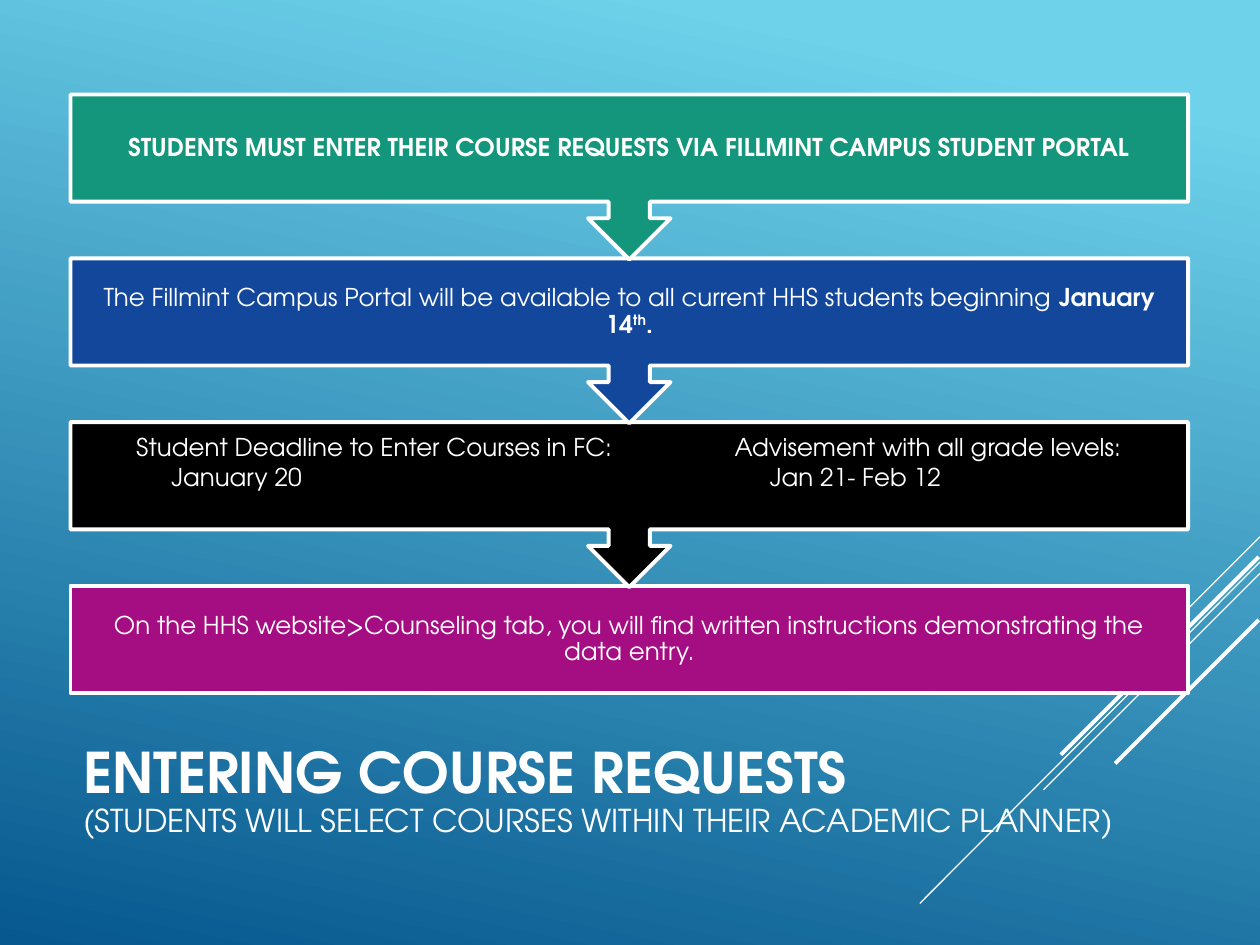
import pptx
import pptx.util
import pptx.dml.color
import pptx.enum.shapes
import pptx.enum.text
import pptx.oxml
import pptx.oxml.ns
from pptx.util import Inches

RGBColor = pptx.dml.color.RGBColor
Shape = pptx.enum.shapes.MSO_SHAPE
Align = pptx.enum.text.PP_ALIGN

WHITE = RGBColor(0xFF, 0xFF, 0xFF)
SKY = RGBColor(0x6E, 0xD2, 0xEB)
DEEP_BLUE = RGBColor(0x06, 0x58, 0x8E)
GREEN = RGBColor(0x14, 0x96, 0x7C)
BLUE = RGBColor(0x12, 0x47, 0x9B)
BLACK = RGBColor(0x00, 0x00, 0x00)
MAGENTA = RGBColor(0xA5, 0x0E, 0x82)
FONT = "TeX Gyre Adventor"


def add_span(para, text, size=14, bold=False):
    span = para.add_run()
    span.text = text
    formats = {"name": FONT, "size": pptx.util.Pt(size), "bold": bold}
    for name, value in formats.items():
        setattr(span.font, name, value)
    span.font.color.rgb = WHITE
    return span


def set_frame(frame, margin_x, margin_y):
    formats = {
        "word_wrap": True,
        "vertical_anchor": pptx.enum.text.MSO_ANCHOR.MIDDLE,
        "margin_left": Inches(margin_x),
        "margin_right": Inches(margin_x),
        "margin_top": Inches(margin_y),
        "margin_bottom": Inches(margin_y),
    }
    for name, value in formats.items():
        setattr(frame, name, value)


deck = pptx.Presentation()
deck.slide_width, deck.slide_height = Inches(10), Inches(7.5)
page = deck.slides.add_slide(deck.slide_layouts[5])

# Background
backdrop = page.background.fill
backdrop.gradient()
backdrop.gradient_angle = 258
for stop, color, position in zip(backdrop.gradient_stops, (SKY, DEEP_BLUE), (0.1, 1)):
    stop.color.rgb = color
    stop.position = position

# Diagonal lines in the corner: start x, start y, end x, end y, width
diagonals = [
    (10, 4.26, 9.17, 5.09, 0.75),
    (10, 4.46, 7.3, 7.17, 0.75),
    (10, 4.55, 8.28, 6.27, 0.75),
    (9.99, 4.42, 8.42, 5.99, 2.25),
    (9.99, 4.92, 8.85, 6.06, 2.25),
]
for *ends, width in diagonals:
    diagonal = page.shapes.add_connector(
        pptx.enum.shapes.MSO_CONNECTOR.STRAIGHT, *map(Inches, ends))
    diagonal.line.color.rgb = WHITE
    diagonal.line.width = pptx.util.Pt(width)
    diagonal._element.spPr.append(pptx.oxml.parse_xml(
        "<a:effectLst %s/>" % pptx.oxml.ns.nsdecls("a")))

# Title
title = page.shapes.title
title.left, title.top = Inches(0.56), Inches(5.5)
title.width, title.height = Inches(8.52), Inches(1.58)
set_frame(title.text_frame, 0.1, 0.05)
para = title.text_frame.paragraphs[0]
para.alignment = Align.LEFT
para.line_spacing = 0.9
add_span(para, "ENTERING COURSE REQUESTS", 32, True)
para.add_line_break()
add_span(para, "(STUDENTS WILL SELECT COURSES WITHIN THEIR ACADEMIC PLANNER)", 18)

# Steps: fill and spans of (text, bold, superscript)
steps = [
    (GREEN, [("STUDENTS MUST ENTER THEIR COURSE REQUESTS VIA FILLMINT CAMPUS "
              "STUDENT PORTAL", True, False)]),
    (BLUE, [("The Fillmint Campus Portal will be available to all current HHS "
             "students beginning ", False, False),
            ("January 14", True, False), ("th", True, True), (".", True, False)]),
    (BLACK, []),
    (MAGENTA, [("On the HHS website>Counseling tab, you will find written "
                "instructions demonstrating the data entry.", False, False)]),
]
STEP_TOP, STEP_PITCH = 0.75, 1.3
last = len(steps) - 1

# Drawn from the bottom up, so that each arrow tip covers the box below it
for index, (color, spans) in reversed(list(enumerate(steps))):
    kind, height = (Shape.RECTANGLE, 0.85) if index == last else (Shape.DOWN_ARROW_CALLOUT, 1.31)
    box = page.shapes.add_shape(
        kind, Inches(0.56), Inches(STEP_TOP + index * STEP_PITCH), Inches(8.87), Inches(height))
    box.shadow.inherit = False
    box.fill.solid()
    box.fill.fore_color.rgb = color
    box.line.color.rgb = WHITE
    box.line.width = pptx.util.Pt(2.25)
    set_frame(box.text_frame, 0.11, 0.11)
    para = box.text_frame.paragraphs[0]
    para.alignment = Align.CENTER
    para.line_spacing = 0.9
    for text, bold, superscript in spans:
        span = add_span(para, text, bold=bold)
        if superscript:
            span._r.get_or_add_rPr().set("baseline", "30000")

# Two columns of dates on the black step
dates = [
    (1.08, 4.2, "Student Deadline to Enter Courses in FC:", "January 20"),
    (5.83, 3.4, "Advisement with all grade levels:", "Jan 21- Feb 12"),
]
for left, width, label, date in dates:
    column = page.shapes.add_textbox(Inches(left), Inches(3.38), Inches(width), Inches(0.6))
    frame = column.text_frame
    set_frame(frame, 0, 0)
    heading, detail = frame.paragraphs[0], frame.add_paragraph()
    for para, text in ((heading, label), (detail, date)):
        para.line_spacing = 0.9
        add_span(para, text)
    heading.space_after = pptx.util.Pt(2)
    detail._p.get_or_add_pPr().set("marL", str(Inches(0.28)))

deck.save("out.pptx")
